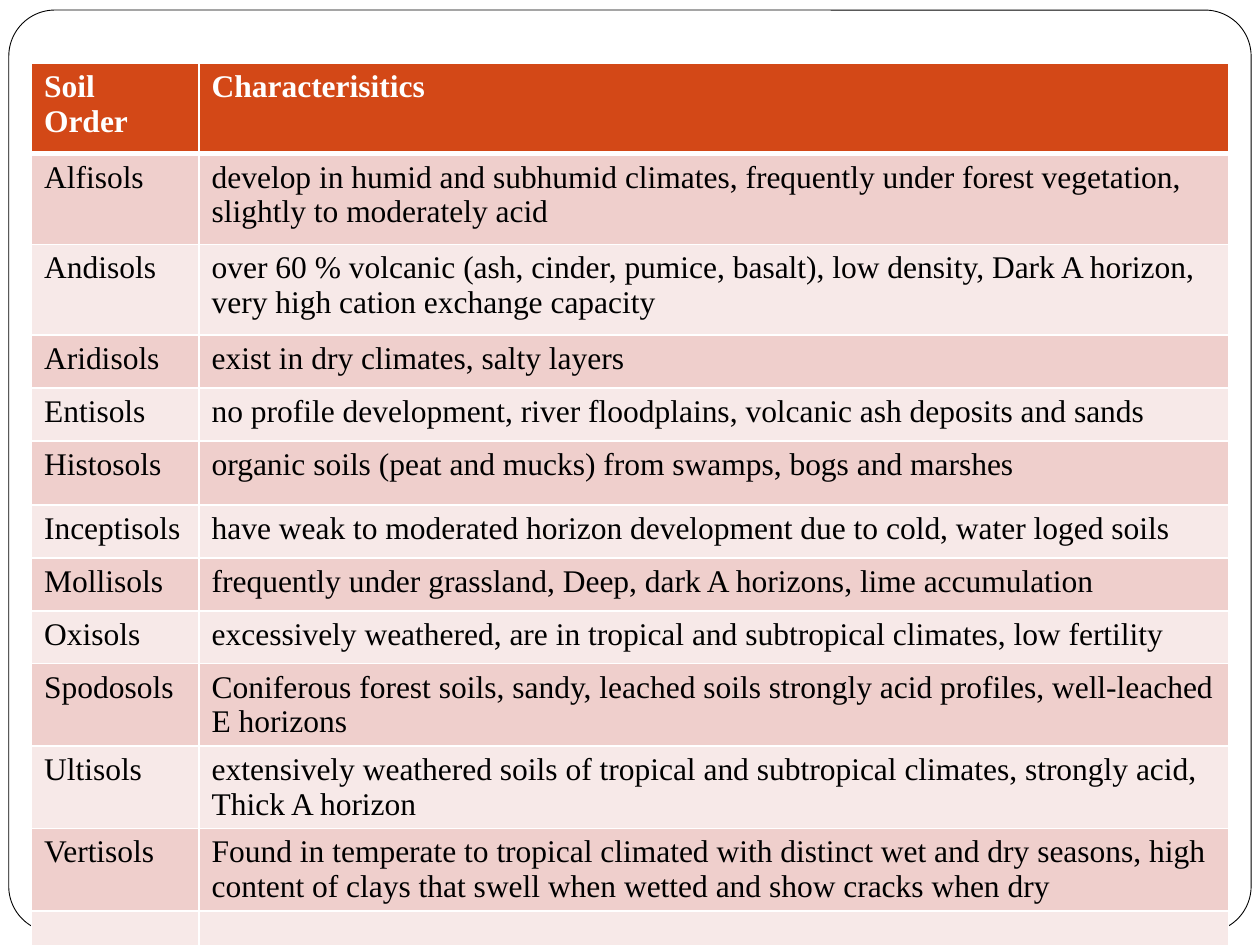
from dataclasses import dataclass

from lxml import etree
from pptx import Presentation
from pptx.dml.color import RGBColor
from pptx.enum.shapes import MSO_SHAPE
from pptx.oxml.ns import qn
from pptx.util import Inches, Pt

ROUNDED = MSO_SHAPE.ROUNDED_RECTANGLE


@dataclass(frozen=True)
class Theme:
    font: str = "Times New Roman"
    text_size: int = 18
    white: str = "FFFFFF"
    black: str = "000000"
    header: str = "D34817"
    bands: tuple = ("EFCFCC", "F7E9E8")
    frame_line: float = 0.5
    grid_line: float = 1
    header_line: float = 3


class SlideBuilder:
    def __init__(self, slide, theme):
        self.slide = slide
        self.theme = theme

    def frame(self, left, top, width, height, corner):
        frame = self.slide.shapes.add_shape(
            ROUNDED, Inches(left), Inches(top), Inches(width), Inches(height))
        frame.adjustments[0] = corner
        frame.shadow.inherit = False
        frame.fill.solid()
        frame.fill.fore_color.rgb = RGBColor.from_string(self.theme.white)
        frame.line.color.rgb = RGBColor.from_string(self.theme.black)
        frame.line.width = Pt(self.theme.frame_line)

    def table(self, left, top, widths, heights, rows):
        table = self.slide.shapes.add_table(
            len(rows), len(widths), Inches(left), Inches(top),
            Inches(sum(widths)), Inches(sum(heights))).table
        for column, width in zip(table.columns, widths):
            column.width = Inches(width)
        for index, (row, height, texts) in enumerate(zip(table.rows, heights, rows)):
            row.height = Inches(height)
            for cell, text in zip(row.cells, texts):
                self.cell(cell, text, index)

    def cell(self, cell, text, row_index):
        theme = self.theme
        is_header = row_index == 0
        self.borders(cell, {
            "a:lnL": theme.grid_line,
            "a:lnR": theme.grid_line,
            "a:lnT": theme.header_line if row_index == 1 else theme.grid_line,
            "a:lnB": theme.header_line if is_header else theme.grid_line,
        })
        band = theme.bands[(row_index - 1) % len(theme.bands)]
        cell.fill.solid()
        cell.fill.fore_color.rgb = RGBColor.from_string(theme.header if is_header else band)
        paragraph = cell.text_frame.paragraphs[0]
        paragraph.text = text
        paragraph.font.size = Pt(theme.text_size)
        for run in paragraph.runs:
            run.font.name = theme.font
            run.font.size = Pt(theme.text_size)
            run.font.bold = is_header
            run.font.color.rgb = RGBColor.from_string(
                theme.white if is_header else theme.black)

    def borders(self, cell, widths):
        properties = cell._tc.get_or_add_tcPr()
        for side, width in widths.items():
            line = etree.SubElement(properties, qn(side), w=str(Pt(width)))
            fill = etree.SubElement(line, qn("a:solidFill"))
            etree.SubElement(fill, qn("a:srgbClr"), val=self.theme.white)


SOIL_ORDERS = [
    ("Soil Order", "Characterisitics"),
    ("Alfisols", "develop in humid and subhumid climates, frequently under forest "
                 "vegetation, slightly to moderately acid"),
    ("Andisols", "over 60 % volcanic (ash, cinder, pumice, basalt), low density, "
                 "Dark A horizon, very high cation exchange capacity"),
    ("Aridisols", "exist in dry climates, salty layers"),
    ("Entisols", "no profile development, river floodplains, volcanic ash deposits and sands"),
    ("Histosols", "organic soils (peat and mucks) from swamps, bogs and marshes"),
    ("Inceptisols", "have weak to moderated horizon development due to cold, water loged soils"),
    ("Mollisols", "frequently under grassland, Deep, dark A horizons, lime accumulation"),
    ("Oxisols", "excessively weathered, are in tropical and subtropical climates, low fertility"),
    ("Spodosols", "Coniferous forest soils, sandy, leached soils strongly acid profiles, "
                  "well-leached E horizons"),
    ("Ultisols", "extensively weathered soils of tropical and subtropical climates, "
                 "strongly acid, Thick A horizon"),
    ("Vertisols", "Found in temperate to tropical climated with distinct wet and dry seasons, "
                  "high content of clays that swell when wetted and show cracks when dry"),
    ("", ""),
]
ROW_HEIGHTS = [0.72] * 3 + [0.42] * 2 + [0.51] + [0.42] * 7


def main():
    presentation = Presentation()
    presentation.slide_width = Inches(10)
    presentation.slide_height = Inches(7.5)
    slide = presentation.slides.add_slide(presentation.slide_layouts[6])
    builder = SlideBuilder(slide, Theme())
    builder.frame(0.07, 0.08, 9.86, 7.32, corner=0.05)
    builder.table(0.25, 0.5, [1.33, 8.17], ROW_HEIGHTS, SOIL_ORDERS)
    presentation.save("out.pptx")


if __name__ == "__main__":
    main()
